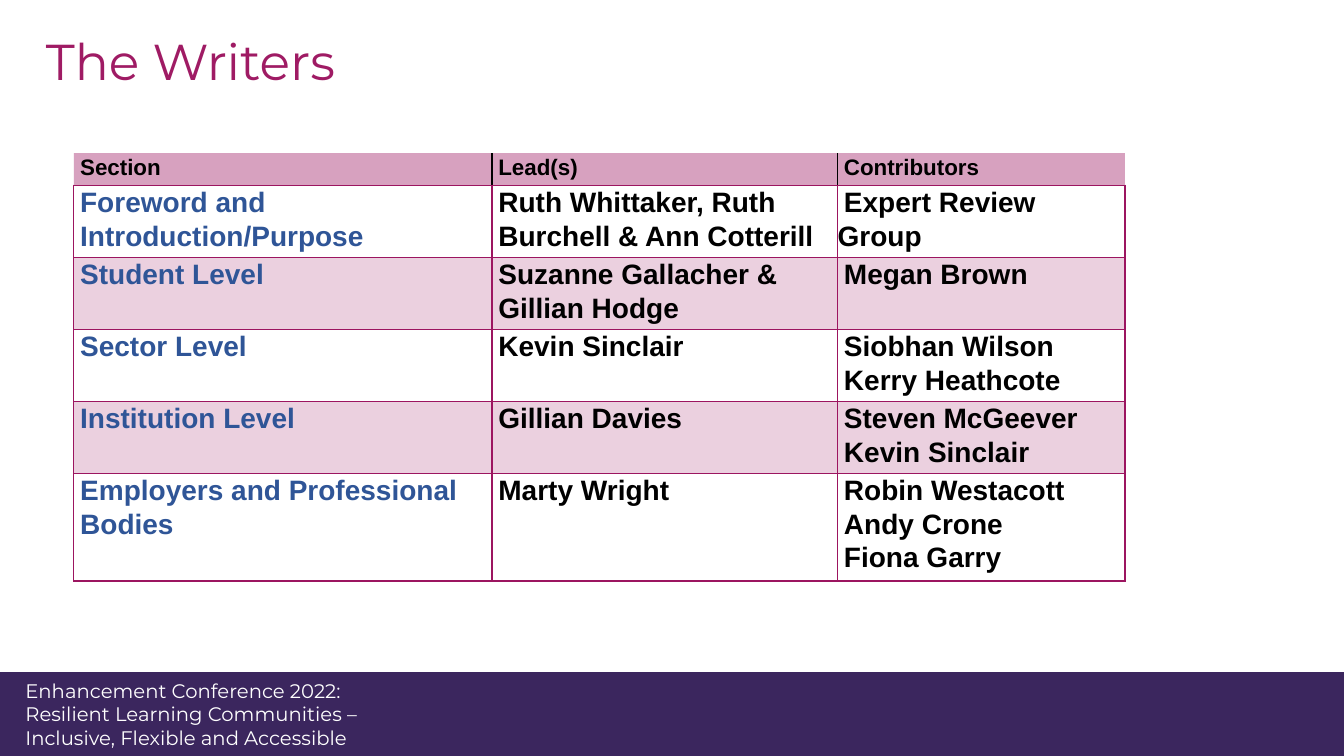
from lxml import etree
from pptx import Presentation
from pptx.dml.color import RGBColor
from pptx.enum.shapes import MSO_SHAPE
from pptx.enum.text import MSO_ANCHOR, PP_ALIGN
from pptx.oxml.ns import qn
from pptx.util import Cm, Pt

RECTANGLE = MSO_SHAPE.RECTANGLE
MIDDLE, TOP = MSO_ANCHOR.MIDDLE, MSO_ANCHOR.TOP
LEFT = PP_ALIGN.LEFT

TITLE = "The Writers"
FOOTER = [
    "Enhancement Conference 2022:",
    "Resilient Learning Communities –",
    "Inclusive, Flexible and Accessible",
]
WRITERS = [
    (["Section"], ["Lead(s)"], ["Contributors"]),
    (["Foreword and", "Introduction/Purpose"],
     ["Ruth Whittaker, Ruth", "Burchell & Ann Cotterill"],
     ["Expert Review Group"]),
    (["Student Level"], ["Suzanne Gallacher &", "Gillian Hodge"], ["Megan Brown"]),
    (["Sector Level"], ["Kevin Sinclair"], ["Siobhan Wilson", "Kerry Heathcote"]),
    (["Institution Level"], ["Gillian Davies"], ["Steven McGeever", "Kevin Sinclair"]),
    (["Employers and Professional", "Bodies"], ["Marty Wright"],
     ["Robin Westacott", "Andy Crone", "Fiona Garry"]),
]
COLUMN_WIDTHS = [10.54, 8.71, 7.24]
HEADER_HEIGHT, LINE_HEIGHT = 0.81, 0.85
SLIDE_WIDTH, SLIDE_HEIGHT, FOOTER_HEIGHT = 33.87, 19.05, 2.11

BLACK, WHITE = "000000", "FFFFFF"
PURPLE, MAGENTA = "3B265E", "9F1B64"
BERRY, BLUE = "9C1560", "2F5597"


def rgb(color):
    return RGBColor.from_string(color)


def write(frame, lines, font, size, color, bold=False, spacing=1.0, indent=0):
    """Fill a text frame, one paragraph per line, each with a first-line indent."""
    frame.word_wrap = True
    for number, line in enumerate(lines):
        paragraph = frame.paragraphs[0] if number == 0 else frame.add_paragraph()
        paragraph.alignment = LEFT
        paragraph.line_spacing = spacing
        paragraph._p.get_or_add_pPr().set("indent", str(Cm(indent)))
        run = paragraph.add_run()
        run.text = line
        run.font.name = font
        run.font.size = Pt(size)
        run.font.bold = bold
        run.font.color.rgb = rgb(color)


def tint(cell, color, percent):
    """Fill a cell with a partly transparent colour."""
    cell.fill.solid()
    cell.fill.fore_color.rgb = rgb(color)
    swatch = cell._tc.tcPr.find(qn("a:solidFill"))[0]
    etree.SubElement(swatch, qn("a:alpha"), val=str(percent * 1000))


def add_borders(cell, colors):
    """Draw left, right, top and bottom borders; None leaves a side open."""
    properties = cell._tc.get_or_add_tcPr()
    for place, (side, color) in enumerate(zip("LRTB", colors)):
        line = etree.Element(qn("a:ln" + side), w=str(Pt(1)))
        if color:
            fill = etree.SubElement(line, qn("a:solidFill"))
            etree.SubElement(fill, qn("a:srgbClr"), val=color)
        else:
            etree.SubElement(line, qn("a:noFill"))
        properties.insert(place, line)


def add_footer(slide):
    band = slide.shapes.add_shape(
        RECTANGLE, 0, Cm(SLIDE_HEIGHT - FOOTER_HEIGHT), Cm(SLIDE_WIDTH), Cm(FOOTER_HEIGHT))
    band.shadow.inherit = False
    band.fill.solid()
    band.fill.fore_color.rgb = rgb(PURPLE)
    band.line.fill.background()
    band.text_frame.vertical_anchor = MIDDLE
    band.text_frame.margin_left = Cm(0.64)
    write(band.text_frame, FOOTER, "Montserrat", 14, WHITE)


def add_title(slide):
    title = slide.shapes.add_textbox(Cm(0.91), Cm(0.81), Cm(32.08), Cm(3.05))
    write(title.text_frame, [TITLE], "Montserrat", 36, MAGENTA, spacing=0.9)


def add_writers(slide):
    heights = [HEADER_HEIGHT] + [
        LINE_HEIGHT * max(len(lines) for lines in row) for row in WRITERS[1:]]
    table = slide.shapes.add_table(
        len(WRITERS), len(COLUMN_WIDTHS), Cm(1.86), Cm(3.86),
        Cm(sum(COLUMN_WIDTHS)), Cm(sum(heights))).table
    for column, width in zip(table.columns, COLUMN_WIDTHS):
        column.width = Cm(width)
    last = len(COLUMN_WIDTHS) - 1
    for r, row in enumerate(WRITERS):
        table.rows[r].height = Cm(heights[r])
        for c, lines in enumerate(row):
            cell = table.cell(r, c)
            cell.margin_left = cell.margin_right = 0
            cell.margin_top = cell.margin_bottom = 0
            cell.vertical_anchor = TOP
            header = r == 0
            color = BLUE if c == 0 and not header else BLACK
            write(cell.text_frame, lines, "Arial", 16 if header else 20, color,
                  bold=True, spacing=1.07, indent=0.16)
            if header:
                tint(cell, BERRY, 40)
                add_borders(cell, (BLACK if c > 0 else None,
                                   BLACK if c < last else None, None, BERRY))
            else:
                if r % 2 == 0:
                    tint(cell, BERRY, 20)
                else:
                    cell.fill.background()
                add_borders(cell, [BERRY] * 4)


def main():
    deck = Presentation()
    deck.slide_width, deck.slide_height = Cm(SLIDE_WIDTH), Cm(SLIDE_HEIGHT)
    slide = deck.slides.add_slide(deck.slide_layouts[6])
    add_footer(slide)
    add_title(slide)
    add_writers(slide)
    deck.save("out.pptx")


if __name__ == "__main__":
    main()
